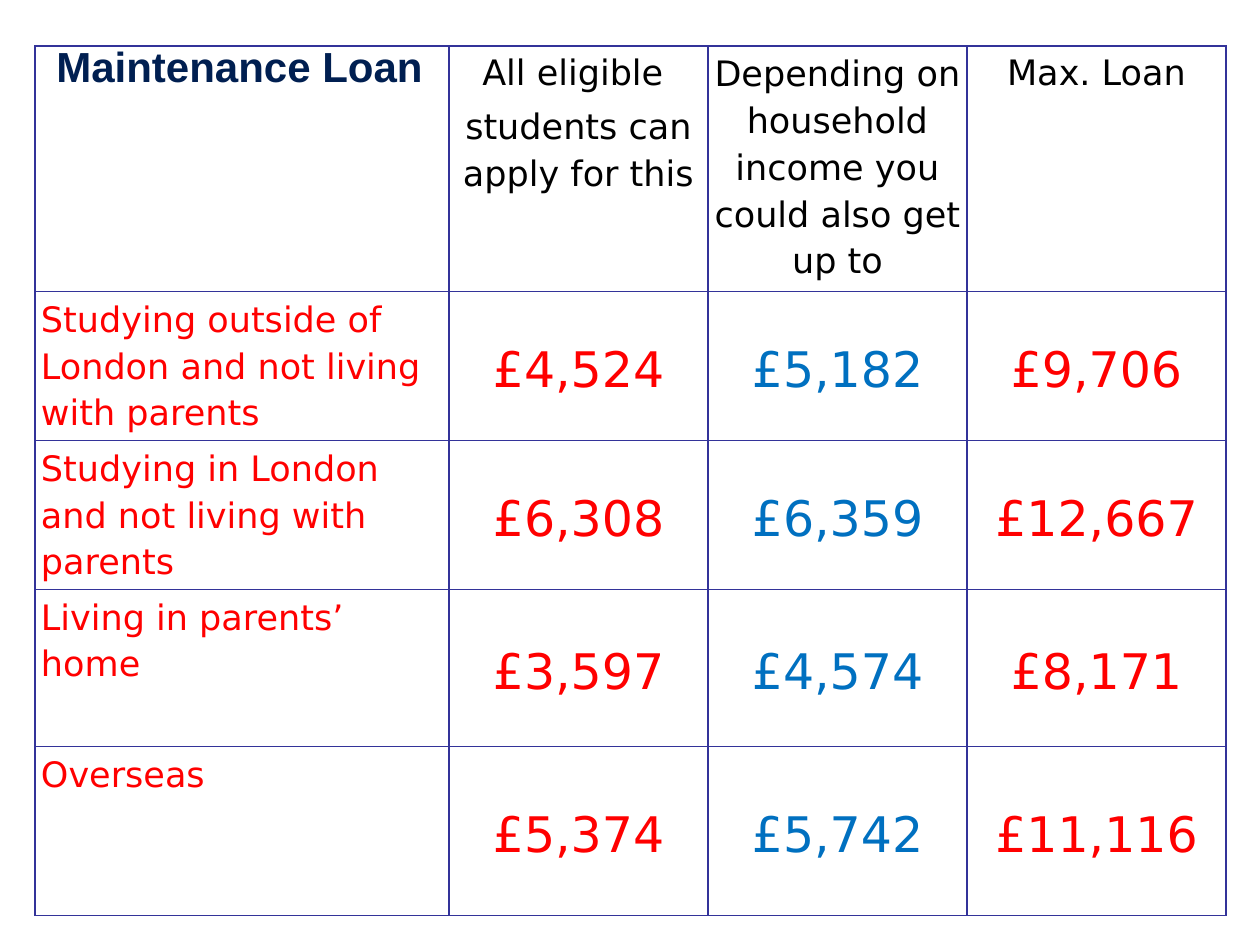
from lxml.etree import SubElement
from pptx import Presentation
from pptx.dml.color import RGBColor
from pptx.enum.text import MSO_ANCHOR, PP_ALIGN
from pptx.oxml.ns import qn
from pptx.util import Emu, Pt

PX_PER_INCH = 126
RED, BLUE, BLACK, NAVY, BORDER = "FF0000", "0070C0", "000000", "001F51", "333399"

HEADINGS = [
    ["All eligible ", "students can apply for this"],
    ["Depending on household income you could also get up to"],
    ["Max. Loan"],
]
LOANS = [
    ("Studying outside of London and not living with parents", "£4,524", "£5,182", "£9,706"),
    ("Studying in London and not living with parents", "£6,308", "£6,359", "£12,667"),
    ("Living in parents’ home", "£3,597", "£4,574", "£8,171"),
    ("Overseas", "£5,374", "£5,742", "£11,116"),
]
COLUMN_WIDTHS = [414, 259, 259, 259]
ROW_HEIGHTS = [240, 146, 147, 157, 169]
TIGHT, ROOMY = (1, 1), (6, 2)
COLUMN_INSETS = [ROOMY, TIGHT, ROOMY, TIGHT]
AMOUNT_COLORS = [RED, BLUE, RED]


def px(length):
    return Emu(length * 914400 // PX_PER_INCH)


def color(value):
    return RGBColor.from_string(value)


def apply(target, values):
    for name, value in values.items():
        setattr(target, name, value)


class SlideBuilder:
    title_font = {"name": "Arial", "size": Pt(24), "bold": True}
    table_font = "DejaVu Sans"
    line_spacing = 1.15
    paragraph_gap = Pt(4.3)

    def __init__(self, page):
        self.page = page

    def title(self, text, left, top, width, height):
        box = self.page.shapes.add_textbox(px(left), px(top), px(width), px(height))
        apply(box.text_frame, {"word_wrap": True, "vertical_anchor": MSO_ANCHOR.MIDDLE})
        span = box.text_frame.paragraphs[0].add_run()
        span.text = text
        apply(span.font, self.title_font)
        span.font.color.rgb = color(NAVY)

    def table(self, left, top, widths, heights):
        frame = self.page.shapes.add_table(
            len(heights), len(widths), px(left), px(top), px(sum(widths)), px(sum(heights)))
        table = frame.table
        apply(table, {"first_row": False, "horz_banding": False})
        for column, width in zip(table.columns, widths):
            column.width = px(width)
        for row, height in zip(table.rows, heights):
            row.height = px(height)
        for cell in table.iter_cells():
            self.outline(cell)
            cell.fill.background()
        return table

    def outline(self, cell):
        properties = cell._tc.get_or_add_tcPr()
        for side in ("a:lnL", "a:lnR", "a:lnT", "a:lnB"):
            line = SubElement(properties, qn(side), w=str(Pt(1)))
            fill = SubElement(line, qn("a:solidFill"))
            SubElement(fill, qn("a:srgbClr"), val=BORDER)

    def cell_text(self, cell, lines, size, text_color, inset, align, anchor):
        side, edge = inset
        apply(cell, {
            "margin_left": px(side), "margin_right": px(side),
            "margin_top": px(edge), "margin_bottom": px(edge),
            "vertical_anchor": anchor,
        })
        for index, line in enumerate(lines):
            if index == 0:
                para = cell.text_frame.paragraphs[0]
            else:
                para = cell.text_frame.add_paragraph()
                para.space_before = self.paragraph_gap
            apply(para, {"alignment": align, "line_spacing": self.line_spacing})
            span = para.add_run()
            span.text = line
            apply(span.font, {"name": self.table_font, "size": Pt(size)})
            span.font.color.rgb = color(text_color)


def main():
    deck = Presentation()
    apply(deck, {"slide_width": px(1260), "slide_height": px(945)})
    builder = SlideBuilder(deck.slides.add_slide(deck.slide_layouts[6]))

    builder.title("Maintenance Loan", 44, 27, 880, 77)
    table = builder.table(35, 46, COLUMN_WIDTHS, ROW_HEIGHTS)
    for column, lines in enumerate(HEADINGS, start=1):
        builder.cell_text(table.cell(0, column), lines, 20, BLACK,
                          COLUMN_INSETS[column], PP_ALIGN.CENTER, MSO_ANCHOR.TOP)
    for row, (situation, *amounts) in enumerate(LOANS, start=1):
        builder.cell_text(table.cell(row, 0), [situation], 20, RED,
                          COLUMN_INSETS[0], PP_ALIGN.LEFT, MSO_ANCHOR.TOP)
        for column, (amount, amount_color) in enumerate(zip(amounts, AMOUNT_COLORS), start=1):
            builder.cell_text(table.cell(row, column), [amount], 28, amount_color,
                              COLUMN_INSETS[column], PP_ALIGN.CENTER, MSO_ANCHOR.MIDDLE)

    deck.save("out.pptx")


if __name__ == "__main__":
    main()
